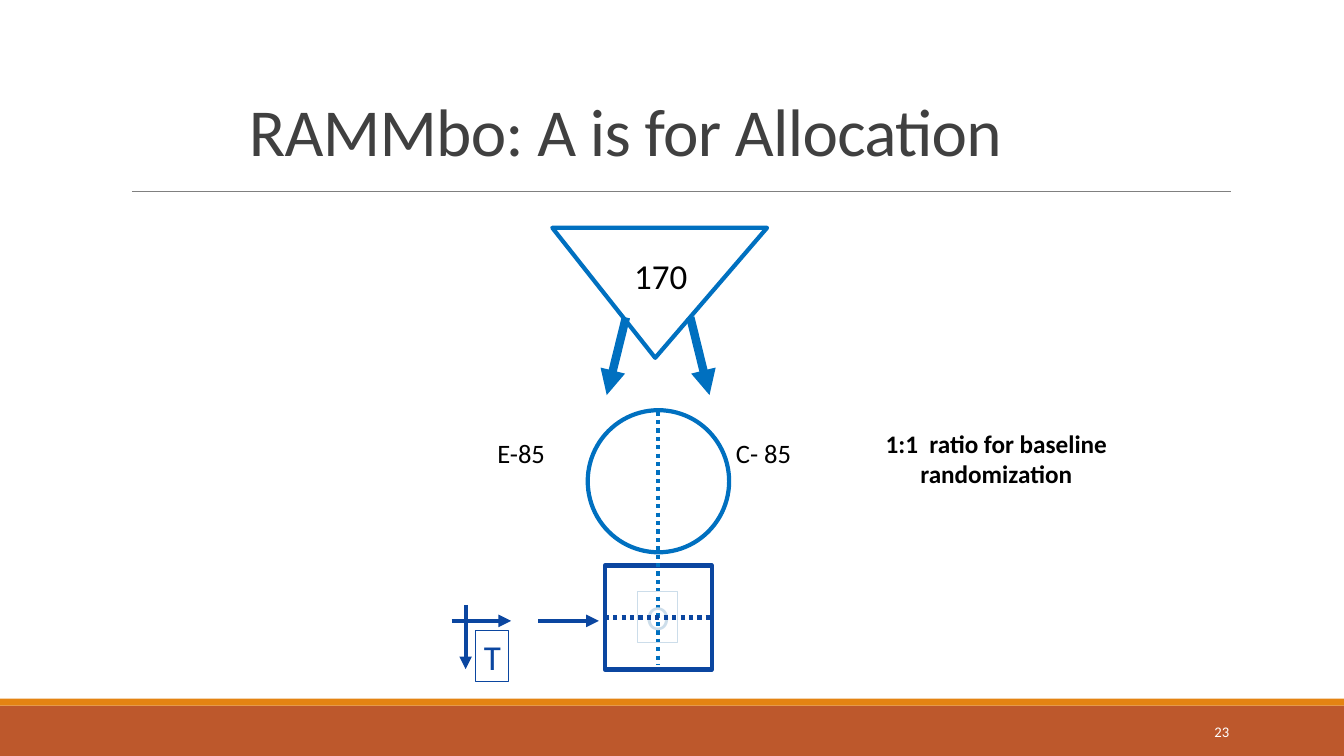
from pptx import Presentation
from pptx.dml.color import RGBColor
from pptx.enum.dml import MSO_LINE
from pptx.enum.shapes import MSO_CONNECTOR, MSO_SHAPE
from pptx.enum.text import MSO_ANCHOR, PP_ALIGN
from pptx.oxml.ns import qn
from pptx.util import Pt
from lxml import etree

RUST = RGBColor(0xBD, 0x58, 0x2C)
ORANGE = RGBColor(0xE4, 0x83, 0x12)
GRAY = RGBColor(0x80, 0x80, 0x80)
DARK = RGBColor(0x40, 0x40, 0x40)
BLUE = RGBColor(0x00, 0x70, 0xC0)
NAVY = RGBColor(0x0B, 0x46, 0xA0)
PALE = RGBColor(0xCC, 0xDD, 0xEA)
BLACK = RGBColor(0, 0, 0)
WHITE = RGBColor(0xFF, 0xFF, 0xFF)
FONT = "Calibri"
RECT, OVAL = MSO_SHAPE.RECTANGLE, MSO_SHAPE.OVAL
TRIANGLE = MSO_SHAPE.ISOSCELES_TRIANGLE
STRAIGHT, DOTS = MSO_CONNECTOR.STRAIGHT, MSO_LINE.ROUND_DOT
LEFT, CENTER, RIGHT = PP_ALIGN.LEFT, PP_ALIGN.CENTER, PP_ALIGN.RIGHT
TOP, MIDDLE, BOTTOM = MSO_ANCHOR.TOP, MSO_ANCHOR.MIDDLE, MSO_ANCHOR.BOTTOM


def add_run(p, text, size, color, bold=False):
    """Append a formatted run to a paragraph."""
    r = p.add_run()
    r.text = text
    r.font.name, r.font.size, r.font.bold = FONT, Pt(size), bold
    r.font.color.rgb = color
    return r


def add_shape(s, kind, x, y, w, h, fill=None, line=None, width=3):
    """Draw a preset shape with an optional fill and outline."""
    sp = s.shapes.add_shape(kind, Pt(x), Pt(y), Pt(w), Pt(h))
    sp.shadow.inherit = False
    if fill is None:
        sp.fill.background()
    else:
        sp.fill.solid()
        sp.fill.fore_color.rgb = fill
    if line is None:
        sp.line.fill.background()
    else:
        sp.line.color.rgb, sp.line.width = line, Pt(width)
    return sp


def fill_text(sp, text, size, color, align=LEFT, anchor=TOP, bold=False, wrap=True):
    """Write one paragraph into a shape and return it."""
    tf = sp.text_frame
    tf.word_wrap, tf.vertical_anchor = wrap, anchor
    tf.margin_left = tf.margin_right = Pt(6)
    tf.margin_top = tf.margin_bottom = Pt(3)
    p = tf.paragraphs[0]
    p.alignment = align
    add_run(p, text, size, color, bold)
    return p


def add_label(s, x, y, w, h, text, size, color, **style):
    """Add a text box holding one paragraph."""
    return fill_text(s.shapes.add_textbox(Pt(x), Pt(y), Pt(w), Pt(h)),
                     text, size, color, **style)


def add_line(s, x1, y1, x2, y2, color, width=3, dash=None, arrow=False):
    """Draw a straight connector, dotted or with an arrowhead on request."""
    c = s.shapes.add_connector(STRAIGHT, Pt(x1), Pt(y1), Pt(x2), Pt(y2))
    c.line.color.rgb, c.line.width = color, Pt(width)
    if dash is not None:
        c.line.dash_style = dash
    if arrow:
        etree.SubElement(c.line._get_or_add_ln(), qn("a:tailEnd"), type="triangle")
    etree.SubElement(c._element.spPr, qn("a:effectLst"))
    return c


def add_frame(s, x, y, w, h):
    """Draw the footer bars, title rule and slide number."""
    add_shape(s, RECT, x, y + h - 36, w, 36, fill=RUST)
    add_shape(s, RECT, x, y + h - 41, w, 5, fill=ORANGE)
    add_line(s, x + 94.3, y + 136.8, x + 879.1, y + 136.8, GRAY, 0.5)
    add_label(s, x + 781, y + 508.3, 103, 28.8, "23", 10.5, WHITE,
              align=RIGHT, anchor=MIDDLE)


def add_title(s, x, y, w, h):
    """Place the slide title."""
    sp = s.shapes.title
    sp.left, sp.top, sp.width, sp.height = Pt(x), Pt(y), Pt(w), Pt(h)
    tf = sp.text_frame
    tf.vertical_anchor, tf.word_wrap = BOTTOM, True
    p = tf.paragraphs[0]
    p.alignment, p.line_spacing = LEFT, 0.85
    r = add_run(p, "RAMMbo: A is for Allocation", 48, DARK)
    r.font._element.set("spc", "-50")


def add_participants(s, x, y, w, h):
    """Draw the inverted triangle with its total and two allocation arrows."""
    sp = add_shape(s, TRIANGLE, x, y, w, h, line=BLUE)
    sp.adjustments[0] = 0.521
    sp.rotation = 180
    add_label(s, x + 52.5, y + 15.9, 59, 36, "170", 25, BLACK)
    mid = x + 75.6
    for side in (-1, 1):
        add_line(s, mid + side * 23, y + 64, mid + side * 36.7, y + 119.5,
                 BLUE, 6, arrow=True)


def add_groups(s, x, y, w, h):
    """Draw the group circle with the two group sizes beside it."""
    add_shape(s, OVAL, x, y, w, h, line=BLUE)
    p = add_label(s, x - 70.6, y + 15.9, 255.6, 28.8, "E-85", 19, BLACK)
    tabs = etree.SubElement(p._p.get_or_add_pPr(), qn("a:tabLst"))
    etree.SubElement(tabs, qn("a:tab"), pos=str(Pt(170.5)), algn="l")
    add_run(p, "\tC- 85", 19, BLACK)


def add_outcomes(s, x, y, w, h):
    """Draw the outcome square, its dotted dividers and incoming arrow."""
    square = add_shape(s, RECT, x, y, w, h, line=NAVY)
    add_line(s, x + w / 2, y - 110, x + w / 2, y + 71.3, BLUE, dash=DOTS)
    add_line(s, x - 47.5, y + 39.5, x - 4.3, y + 39.5, NAVY, arrow=True)
    outcome = add_shape(s, RECT, x + 23.7, y + 18.7, 28.1, 36, line=PALE, width=0.75)
    fill_text(outcome, "O", 25, PALE, wrap=False)
    divider = add_line(s, x, y + h / 2, x + w, y + h / 2, NAVY, dash=DOTS)
    divider.begin_connect(square, 1)
    divider.end_connect(square, 3)


def add_time(s, x, y, w, h):
    """Draw the crossed time arrows and their label."""
    add_line(s, x + 10, y, x + 10, y + 46, NAVY, arrow=True)
    add_line(s, x, y + 11.5, x + w, y + 11.5, NAVY, arrow=True)
    sp = add_shape(s, RECT, x + 17, y + h - 36, 23.8, 36, line=NAVY, width=0.75)
    fill_text(sp, "T", 25, NAVY, wrap=False)


def main():
    """Build and save the slide."""
    prs = Presentation()
    prs.slide_width, prs.slide_height = Pt(960), Pt(540)
    s = prs.slides.add_slide(prs.slide_layouts[5])
    add_frame(s, 0, 0, 960, 540)
    add_title(s, 170.6, -1.4, 612, 126.7)
    add_groups(s, 419.8, 293, 101, 101.5)
    add_outcomes(s, 432, 404, 76.5, 74.2)
    add_participants(s, 394.5, 162.7, 153.4, 92.9)
    add_label(s, 624.2, 303.1, 175, 49, "1:1  ratio for baseline randomization",
              18, BLACK, align=CENTER, bold=True)
    add_time(s, 322.6, 432, 42.5, 54.7)
    prs.save("out.pptx")


if __name__ == "__main__":
    main()
